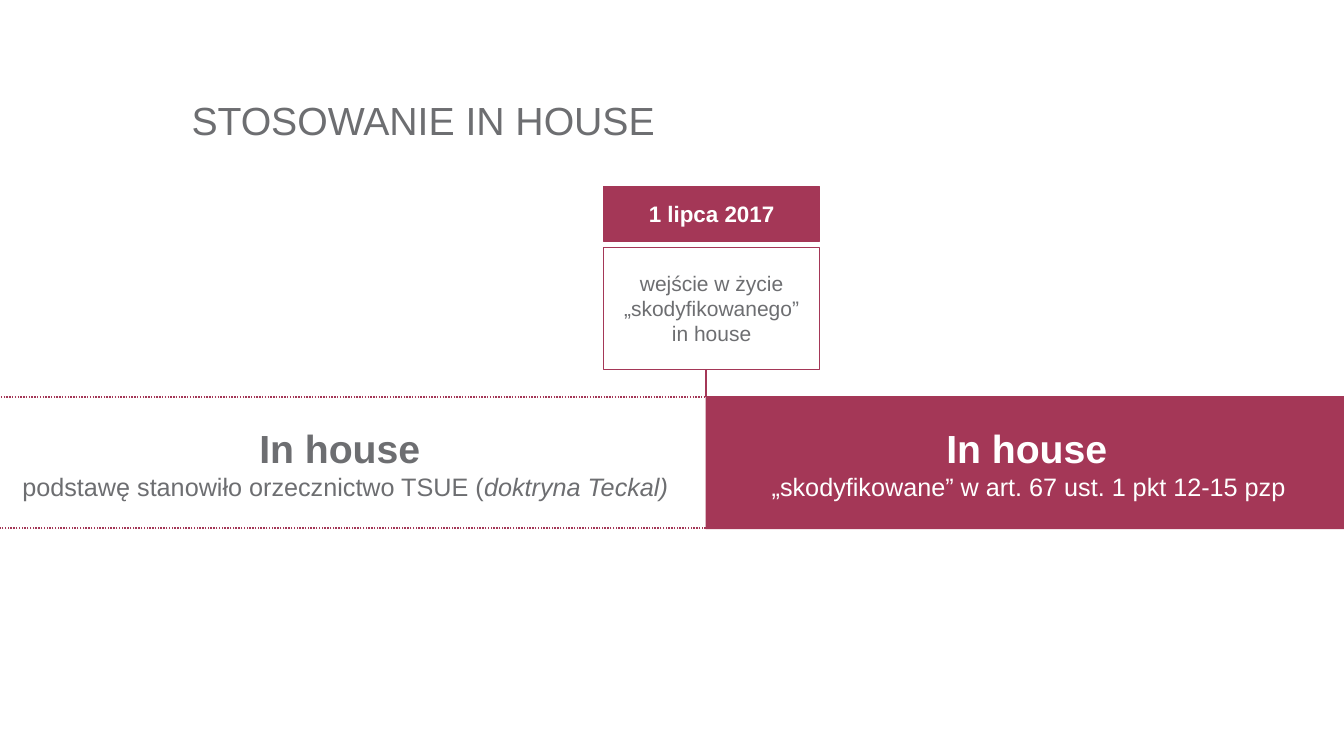
from dataclasses import dataclass

from lxml.etree import SubElement
from pptx import Presentation
from pptx.dml.color import RGBColor as RGB
from pptx.enum.dml import MSO_LINE as Dash
from pptx.enum.shapes import MSO_CONNECTOR as Link, MSO_SHAPE as Kind
from pptx.enum.text import MSO_ANCHOR as Anchor, PP_ALIGN as Align
from pptx.oxml.ns import qn
from pptx.util import Pt


@dataclass(frozen=True)
class Theme:
    font: str = "Arial"
    wine: RGB = RGB(0xA4, 0x37, 0x57)
    grey: RGB = RGB(0x6D, 0x6E, 0x71)
    white: RGB = RGB(0xFF, 0xFF, 0xFF)
    head: int = 28
    body: int = 18
    date: int = 16
    note: int = 15


THEME = Theme()
SPLIT = 504


def style(run, size, color, bold=False, italic=False):
    font = run.font
    font.name = THEME.font
    font.size = Pt(size)
    font.bold = bold
    font.italic = italic
    font.color.rgb = color


def add_title(slide, text):
    title = slide.shapes.title
    title.left, title.top, title.width, title.height = map(Pt, (129.6, 60.5, 746, 49.7))
    frame = title.text_frame
    frame.text = text
    frame.vertical_anchor = Anchor.MIDDLE
    para = frame.paragraphs[0]
    para.alignment = Align.LEFT
    style(para.runs[0], THEME.head, THEME.grey)


def add_box(slide, place, fill, lines, line=None, kind=Kind.RECTANGLE, inset=7.2):
    box = slide.shapes.add_shape(kind, *map(Pt, place))
    box.shadow.inherit = False
    box.fill.solid()
    box.fill.fore_color.rgb = fill
    if line:
        box.line.color.rgb = THEME.wine
        box.line.width = Pt(line)
    else:
        box.line.fill.background()
    frame = box.text_frame
    frame.word_wrap = True
    frame.vertical_anchor = Anchor.MIDDLE
    frame.margin_left = frame.margin_right = Pt(inset)
    ink = THEME.white if fill == THEME.wine else THEME.grey
    frame.text = "\n".join(text for text, size, bold in lines)
    for para, (text, size, bold) in zip(frame.paragraphs, lines):
        para.alignment = Align.CENTER
        style(para.runs[0], size, ink, bold)
    return box


def add_card(slide, top, height, fill, lines):
    place = (431.3, top, 154, height)
    card = add_box(slide, place, fill, lines, 0.5, Kind.ROUNDED_RECTANGLE)
    card.adjustments[0] = 0


def add_era(slide, left, top, width, height, fill, text, **look):
    lines = [("In house ", THEME.head, True), (text, THEME.body, False)]
    return add_box(slide, (left, top, width, height), fill, lines, **look)


def add_stem(slide, top, end):
    stem = slide.shapes.add_connector(Link.STRAIGHT, Pt(SPLIT), Pt(top), Pt(SPLIT), Pt(end))
    stem.line.color.rgb = THEME.wine
    stem.line.width = Pt(1.5)
    SubElement(stem._element.spPr, qn("a:effectLst"))


def main():
    deck = Presentation()
    deck.slide_width, deck.slide_height = Pt(960), Pt(540)
    slide = deck.slides.add_slide(deck.slide_layouts[5])
    add_title(slide, "STOSOWANIE IN HOUSE")
    add_stem(slide, 252.7, 378)

    past = add_era(slide, -15.1, 283.7, 523.4, 93.6, THEME.white,
                   "podstawę stanowiło orzecznictwo TSUE (", line=1)
    past.line.dash_style = Dash.ROUND_DOT
    case = past.text_frame.paragraphs[1].add_run()
    case.text = "doktryna Teckal)"
    style(case, THEME.body, THEME.grey, italic=True)

    add_era(slide, SPLIT, 283, 466.6, 95, THEME.wine,
            "„skodyfikowane” w art. 67 ust. 1 pkt 12-15 pzp ", inset=20.2)

    add_card(slide, 133.2, 38.9, THEME.wine, [("1 lipca 2017", THEME.date, True)])
    add_card(slide, 176.4, 87.1, THEME.white, [
        ("wejście w życie „skodyfikowanego”", THEME.note, False),
        ("in house", THEME.note, False),
    ])
    deck.save("out.pptx")


if __name__ == "__main__":
    main()
